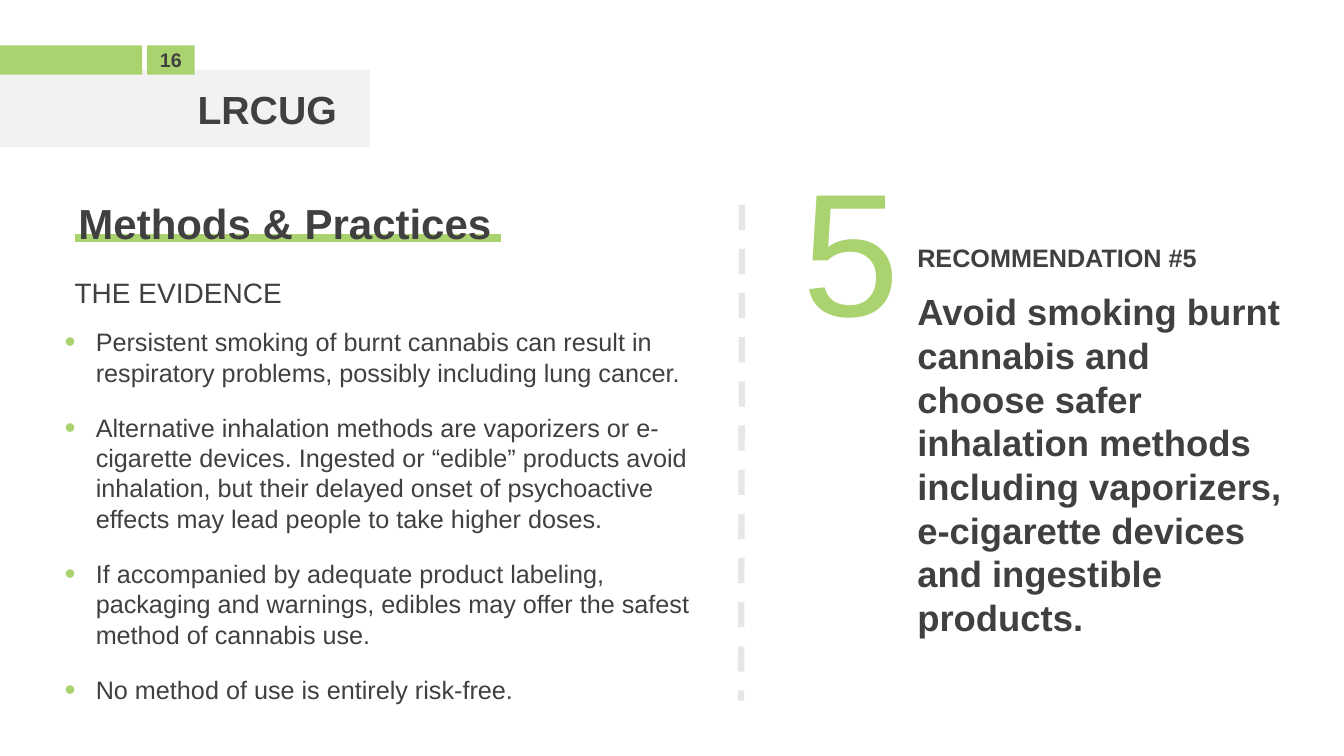
"""Build the LRCUG recommendation slide on methods and practices."""
from lxml.etree import SubElement
from pptx import Presentation
from pptx.dml.color import RGBColor
from pptx.enum.dml import MSO_LINE_DASH_STYLE as Dash
from pptx.enum.shapes import MSO_CONNECTOR as Connector, MSO_SHAPE as Shape
from pptx.enum.text import MSO_ANCHOR as Anchor, MSO_AUTO_SIZE as AutoSize, PP_ALIGN as Align
from pptx.oxml.ns import qn
from pptx.util import Inches, Pt

COLORS = {"text": "414041", "green": "AAD26F", "panel": "F2F2F2", "divider": "E7E6E6"}
FONT = "Arial"
TITLE = "LRCUG"
PAGE_NUMBER = "16"
HEADING = "Methods & Practices"
SUBHEADING = "THE EVIDENCE"
EVIDENCE = [
    "Persistent smoking of burnt cannabis can result in respiratory problems, "
    "possibly including lung cancer.",
    "Alternative inhalation methods are vaporizers or e-cigarette devices. "
    "Ingested or “edible” products avoid inhalation, but their delayed onset of "
    "psychoactive effects may lead people to take higher doses.",
    "If accompanied by adequate product labeling, packaging and warnings, edibles "
    "may offer the safest method of cannabis use.",
    "No method of use is entirely risk-free.",
]
NUMBER = "5"
LABEL = "RECOMMENDATION #5"
ADVICE = (
    "Avoid smoking burnt cannabis and choose safer inhalation methods including "
    "vaporizers, e-cigarette devices and ingestible products."
)
BARS = [
    ("panel", (0, 0.69, 3.67, 0.77)),
    ("green", (0, 0.45, 1.41, 0.29)),
    ("green", (1.46, 0.45, 0.47, 0.29)),
]
INDENT = 0.31


def color(name):
    """Return the named colour."""
    return RGBColor.from_string(COLORS[name])


def place(box, at):
    """Move and size a box, in inches."""
    box.left, box.top, box.width, box.height = map(Inches, at)


def write(box, texts, size=18, bold=False, ink="text", align=Align.LEFT,
          anchor=Anchor.TOP, inset=None, before=0, after=0):
    """Fill a box with one formatted paragraph per text."""
    frame = box.text_frame
    frame.word_wrap = True
    frame.auto_size = AutoSize.NONE
    frame.vertical_anchor = anchor
    if inset is not None:
        frame.margin_left = frame.margin_right = Inches(inset)
        frame.margin_top = frame.margin_bottom = Inches(inset)
    for index, text in enumerate(texts):
        para = frame.add_paragraph() if index else frame.paragraphs[0]
        para.alignment = align
        para.space_before, para.space_after = Pt(before), Pt(after)
        span = para.add_run()
        span.text = text
        span.font.name, span.font.size, span.font.bold = FONT, Pt(size), bold
        span.font.color.rgb = color(ink)
    return frame


def add_text(page, at, texts, **style):
    """Add a text box and write into it."""
    return write(page.shapes.add_textbox(*map(Inches, at)), texts, **style)


def add_bullet(para):
    """Give a paragraph a hanging green bullet."""
    props = para._p.get_or_add_pPr()
    props.set("marL", str(Inches(INDENT)))
    props.set("indent", str(-Inches(INDENT)))
    tint = SubElement(props, qn("a:buClr"))
    SubElement(tint, qn("a:srgbClr"), val=COLORS["green"])
    SubElement(props, qn("a:buSzPct"), val="125000")
    SubElement(props, qn("a:buFont"), typeface=FONT)
    SubElement(props, qn("a:buChar"), char="•")


def add_bar(page, fill, at):
    """Add a plain filled rectangle."""
    bar = page.shapes.add_shape(Shape.RECTANGLE, *map(Inches, at))
    bar.shadow.inherit = False
    bar.fill.solid()
    bar.fill.fore_color.rgb = color(fill)
    bar.line.fill.background()


def add_line(page, ends, ink, width, dash=None):
    """Add a straight line without a shadow."""
    line = page.shapes.add_connector(Connector.STRAIGHT, *map(Inches, ends))
    line.line.color.rgb = color(ink)
    line.line.width = Pt(width)
    if dash:
        line.line.dash_style = dash
    SubElement(line.element.spPr, qn("a:effectLst"))


def main():
    """Build and save the deck."""
    deck = Presentation()
    deck.slide_width, deck.slide_height = Inches(13.33), Inches(7.5)
    page = deck.slides.add_slide(deck.slide_layouts[1])
    title, body = page.placeholders

    for fill, at in BARS:
        add_bar(page, fill, at)
    add_line(page, (0.74, 2.36, 4.97, 2.36), "green", 6)
    add_line(page, (7.36, 2.03, 7.35, 6.95), "divider", 4.5, Dash.DASH)

    place(title, (0.22, 0.79, 3.22, 0.57))
    write(title, [TITLE], size=28, bold=True, align=Align.RIGHT, anchor=Anchor.MIDDLE)
    title.element.getparent().append(title.element)

    place(body, (0.64, 3.24, 6.2, 3.69))
    for para in write(body, EVIDENCE, inset=0, before=18).paragraphs:
        add_bullet(para)

    add_text(page, (1.46, 0.43, 0.47, 0.34), [PAGE_NUMBER], size=14, bold=True,
             align=Align.CENTER)
    add_text(page, (0.68, 1.91, 5.01, 0.61), [HEADING], size=30, bold=True, after=24)
    add_text(page, (0.74, 2.73, 5.49, 0.34), [SUBHEADING], size=20, inset=0, after=24)
    add_text(page, (7.86, 1.35, 1.55, 2.2), [NUMBER], size=125, ink="green")
    advice = add_text(page, (9, 1.79, 3.84, 5.16), [LABEL, ADVICE], bold=True,
                      anchor=Anchor.MIDDLE).paragraphs[1]
    advice.space_before = Pt(12)
    advice.runs[0].font.size = Pt(26)
    deck.save("out.pptx")


if __name__ == "__main__":
    main()
